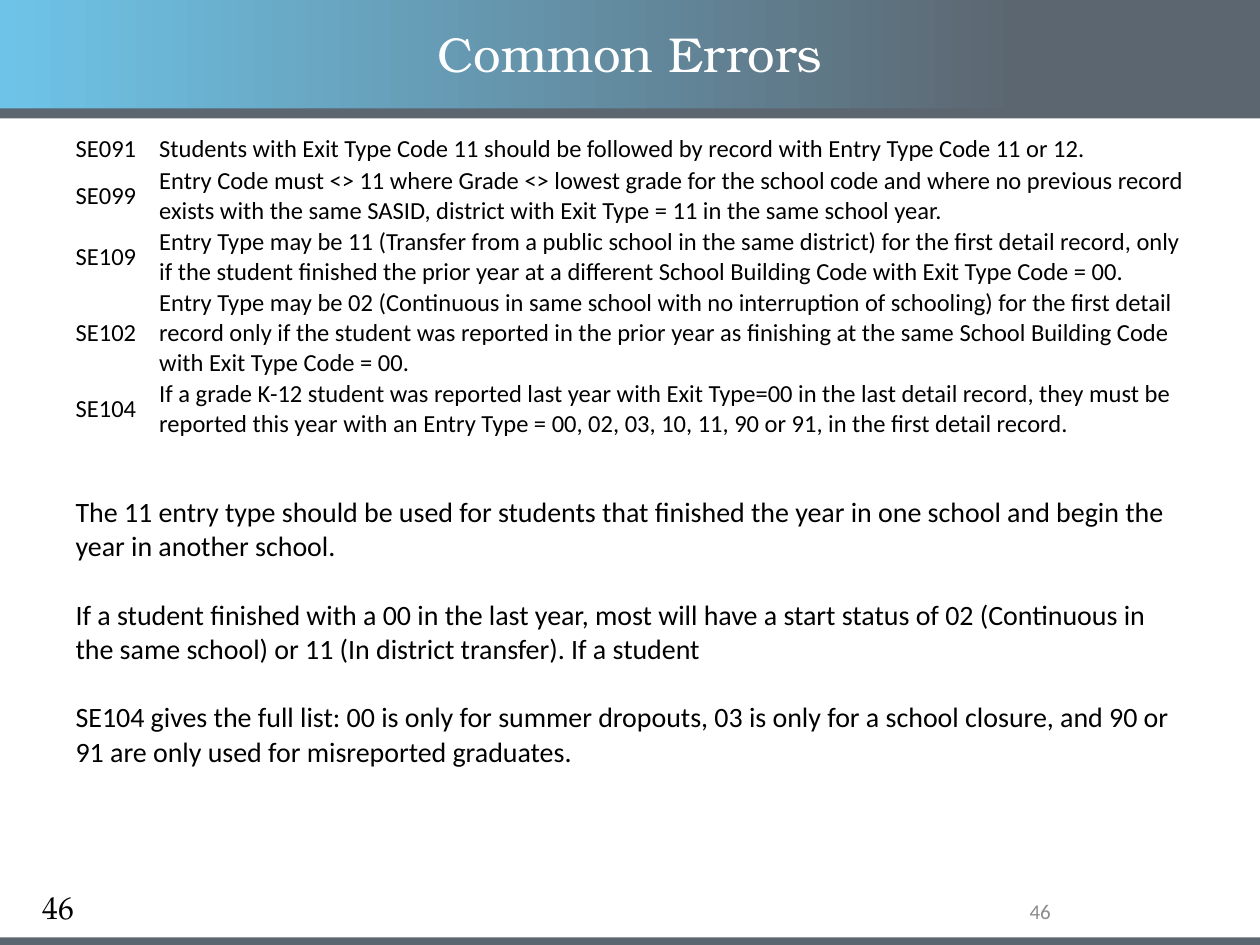
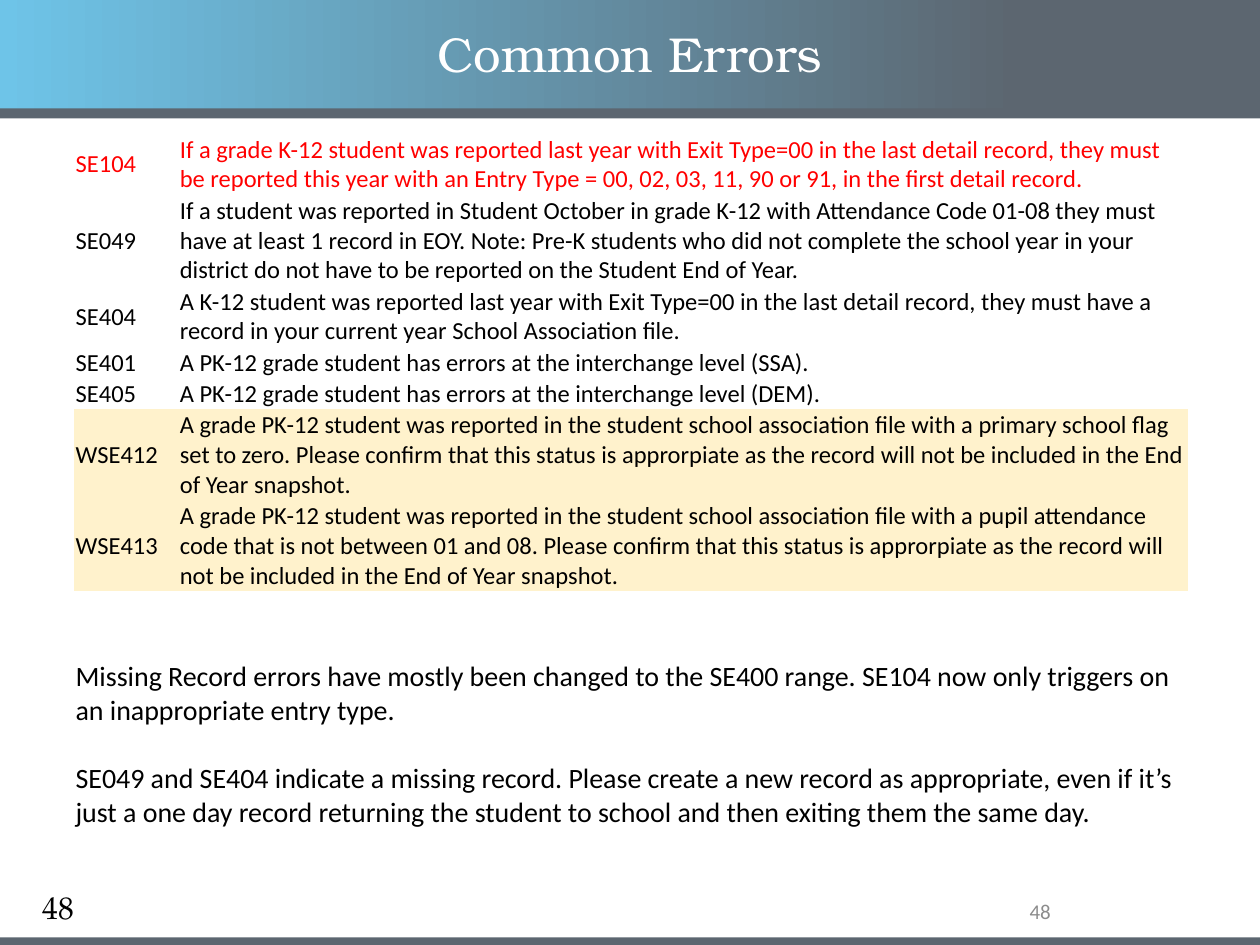
from lxml import etree
from pptx import Presentation
from pptx.dml.color import RGBColor
from pptx.enum.shapes import MSO_SHAPE
from pptx.enum.text import MSO_ANCHOR, MSO_AUTO_SIZE, PP_ALIGN
from pptx.oxml.ns import qn
from pptx.util import Pt

RECT = MSO_SHAPE.RECTANGLE
MIDDLE = MSO_ANCHOR.MIDDLE
LEFT, CENTER, RIGHT = PP_ALIGN.LEFT, PP_ALIGN.CENTER, PP_ALIGN.RIGHT
NO_FIT = MSO_AUTO_SIZE.NONE

# Shared look
SKY, SLATE, WHITE, BLACK = "6EC4E8", "5C6670", "FFFFFF", "000000"
GREY, RED, CREAM = "8C8C8C", "FF0000", "FFF2CC"
BODY_FONT, TITLE_FONT, PAGE_FONT = "Calibri", "TeX Gyre Bonum", "TeX Gyre Pagella"
NO_STYLE = "{2D5ABB26-0587-4C30-8999-92F81FD0307C}"
SLIDE_W, SLIDE_H = 720, 540
BANDS = [(0, 62.6), (61.9, 5.8), (535.7, 5.4)]  # top, height
TABLE_LEFT, TABLE_TOP, TABLE_W = 42, 76.6, 637
ROW_LINE, NOTE_LINE = 17.1, 19.5
PAD_X, PAD_Y = 1.2, 0.35
EMPTY_SIZE = 8

# Error rows: code, rule, number of lines, then colour or fill where it differs.
# Gaps and tail give the heights of the empty rows above and below the notes.
SLIDES = [
    dict(
        title="Common Errors", page="46", code_width=47.8, gaps=[16, 16], tail=[12] * 5,
        note_lines=8,
        errors=[
            ("SE091", "Students with Exit Type Code 11 should be followed by record with "
             "Entry Type Code 11 or 12.", 1, {}),
            ("SE099", "Entry Code must <> 11 where Grade <> lowest grade for the school code "
             "and where no previous record exists with the same SASID, district with "
             "Exit Type = 11 in the same school year.", 2, {}),
            ("SE109", "Entry Type may be 11 (Transfer from a public school in the same "
             "district) for the first detail record, only if the student finished the prior "
             "year at a different School Building Code with Exit Type Code = 00.", 2, {}),
            ("SE102", "Entry Type may be 02 (Continuous in same school with no interruption "
             "of schooling) for the first detail record only if the student was reported in "
             "the prior year as finishing at the same School Building Code with "
             "Exit Type Code = 00.", 3, {}),
            ("SE104", "If a grade K-12 student was reported last year with Exit Type=00 in "
             "the last detail record, they must be reported this year with an "
             "Entry Type = 00, 02, 03, 10, 11, 90 or 91, in the first detail record.", 2, {}),
        ],
        notes=[
            "The 11 entry type should be used for students that finished the year in one "
            "school and begin the year in another school.",
            "If a student finished with a 00 in the last year, most will have a start status "
            "of 02 (Continuous in the same school) or 11 (In district transfer). If a student",
            "SE104 gives the full list: 00 is only for summer dropouts, 03 is only for a "
            "school closure, and 90 or 91 are only used for misreported graduates.",
        ]),
    dict(
        title="Common Errors", page="48", code_width=59.6, gaps=[38.6], tail=[],
        note_lines=5,
        errors=[
            ("SE104", "If a grade K-12 student was reported last year with Exit Type=00 in "
             "the last detail record, they must be reported this year with an "
             "Entry Type = 00, 02, 03, 11, 90 or 91, in the first detail record.",
             2, dict(color=RED)),
            ("SE049", "If a student was reported in Student October in grade K-12 with "
             "Attendance Code 01-08 they must have at least 1 record in EOY. Note: Pre-K "
             "students who did not complete the school year in your district do not have to "
             "be reported on the Student End of Year.", 3, {}),
            ("SE404", "A K-12 student was reported last year with Exit Type=00 in the last "
             "detail record, they must have a record in your current year School "
             "Association file.", 2, {}),
            ("SE401", "A PK-12 grade student has errors at the interchange level (SSA).",
             1, {}),
            ("SE405", "A PK-12 grade student has errors at the interchange level (DEM).",
             1, {}),
            ("WSE412", "A grade PK-12 student was reported in the student school association "
             "file with a primary school flag set to zero. Please confirm that this status "
             "is approrpiate as the record will not be included in the End of Year snapshot.",
             3, dict(fill=CREAM)),
            ("WSE413", "A grade PK-12 student was reported in the student school association "
             "file with a pupil attendance code that is not between 01 and 08. Please "
             "confirm that this status is approrpiate as the record will not be included in "
             "the End of Year snapshot.", 3, dict(fill=CREAM)),
        ],
        notes=[
            "Missing Record errors have mostly been changed to the SE400 range. SE104 now "
            "only triggers on an inappropriate entry type.",
            "SE049 and SE404 indicate a missing record. Please create a new record as "
            "appropriate, even if it’s just a one day record returning the student to school "
            "and then exiting them the same day.",
        ]),
]


def rgb(value):
    return RGBColor.from_string(value)


def write(tf, paragraphs, size=14, font=BODY_FONT, color=BLACK, align=LEFT,
          before=0, spacing=1.0):
    for i, text in enumerate(paragraphs):
        p = tf.paragraphs[0] if i == 0 else tf.add_paragraph()
        p.alignment = align
        p.line_spacing = spacing
        p.space_before = Pt(before if i else 0)
        r = p.add_run()
        r.text = text
        r.font.size, r.font.name = Pt(size), font
        r.font.color.rgb = rgb(color)


def add_text(s, box, text, **style):
    sp = s.shapes.add_textbox(*map(Pt, box))
    tf = sp.text_frame
    tf.word_wrap = True
    tf.vertical_anchor = MIDDLE
    write(tf, [text], **style)


def add_bands(s):
    """Draw the bands and move them to the layout, behind its placeholders."""
    first = next(iter(s.slide_layout.placeholders)).element
    for i, (top, height) in enumerate(BANDS):
        sp = s.shapes.add_shape(RECT, 0, Pt(top), Pt(SLIDE_W), Pt(height))
        sp.shadow.inherit = False
        sp.line.fill.background()
        if i == 0:
            sp.fill.gradient()
            sp.fill.gradient_angle = 0
            stops = sp.fill.gradient_stops
            for stop, color, position in zip(stops, (SKY, SLATE), (0, 0.81)):
                stop.color.rgb = rgb(color)
                stop.position = position
        else:
            sp.fill.solid()
            sp.fill.fore_color.rgb = rgb(SLATE)
        sp.element.nvSpPr.cNvPr.id = 100 + i
        first.addprevious(sp.element)


def set_title(s, text):
    sp = s.shapes.title
    sp.left, sp.top, sp.width, sp.height = map(Pt, (49.7, 11.6, 620.6, 41))
    tf = sp.text_frame
    tf.auto_size = NO_FIT
    tf.vertical_anchor = MIDDLE
    write(tf, [text], size=28, font=TITLE_FONT, color=WHITE, align=CENTER, spacing=0.9)


def add_error_table(s, errors, notes, code_width, gaps, tail, note_lines):
    heights = [n * ROW_LINE + 2 * PAD_Y for _, _, n, _ in errors]
    heights += gaps + [note_lines * NOTE_LINE + 2 * PAD_Y] + tail
    note_row = len(errors) + len(gaps)
    frame = s.shapes.add_table(len(heights), 2, Pt(TABLE_LEFT), Pt(TABLE_TOP),
                               Pt(TABLE_W), Pt(sum(heights)))
    frame.element.xpath(".//a:tableStyleId")[0].text = NO_STYLE
    table = frame.table
    table.first_row = table.horz_banding = False
    for column, width in zip(table.columns, (code_width, TABLE_W - code_width)):
        column.width = Pt(width)
    for row, height in zip(table.rows, heights):
        row.height = Pt(height)
    for cell in table.iter_cells():
        cell.margin_left = cell.margin_right = Pt(PAD_X)
        cell.margin_top = cell.margin_bottom = Pt(PAD_Y)
        cell.vertical_anchor = MIDDLE
        cell.fill.background()

    # Error codes and their rules
    for i, (code, rule, _, look) in enumerate(errors):
        for j, text in enumerate((code, rule)):
            cell = table.cell(i, j)
            write(cell.text_frame, [text], color=look.get("color", BLACK))
            if "fill" in look:
                cell.fill.solid()
                cell.fill.fore_color.rgb = rgb(look["fill"])

    # Notes across both columns, one line apart
    cell = table.cell(note_row, 0)
    cell.merge(table.cell(note_row, 1))
    write(cell.text_frame, notes, size=16, before=NOTE_LINE)

    # Small type keeps the empty rows at their set height
    for cell in table.iter_cells():
        if not cell.text_frame.text:
            p = cell.text_frame.paragraphs[0]
            etree.SubElement(p._p, qn("a:endParaRPr"), sz=str(EMPTY_SIZE * 100))


def main():
    prs = Presentation()
    prs.slide_width, prs.slide_height = Pt(SLIDE_W), Pt(SLIDE_H)
    layout = prs.slide_layouts[5]
    for i, item in enumerate(SLIDES):
        s = prs.slides.add_slide(layout)
        if i == 0:
            add_bands(s)
        set_title(s, item["title"])
        add_error_table(s, item["errors"], item["notes"], item["code_width"],
                        item["gaps"], item["tail"], item["note_lines"])
        # Page numbers
        add_text(s, (508.1, 512.6, 99.4, 16.6), item["page"], size=12, color=GREY,
                 align=RIGHT)
        add_text(s, (0.9, 504, 64.8, 28.8), item["page"], size=18, font=PAGE_FONT,
                 align=CENTER)
    prs.save("out.pptx")


if __name__ == "__main__":
    main()
